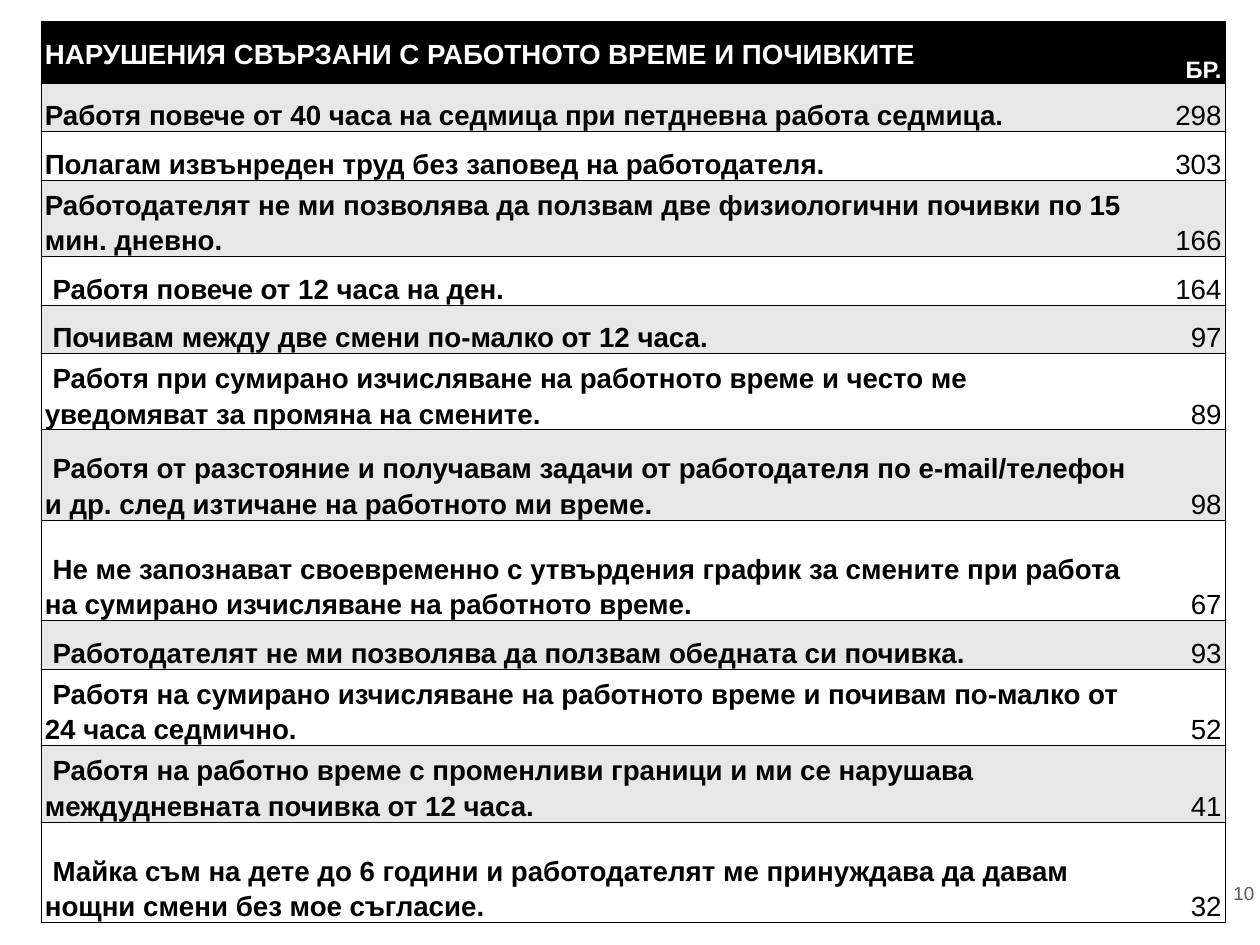
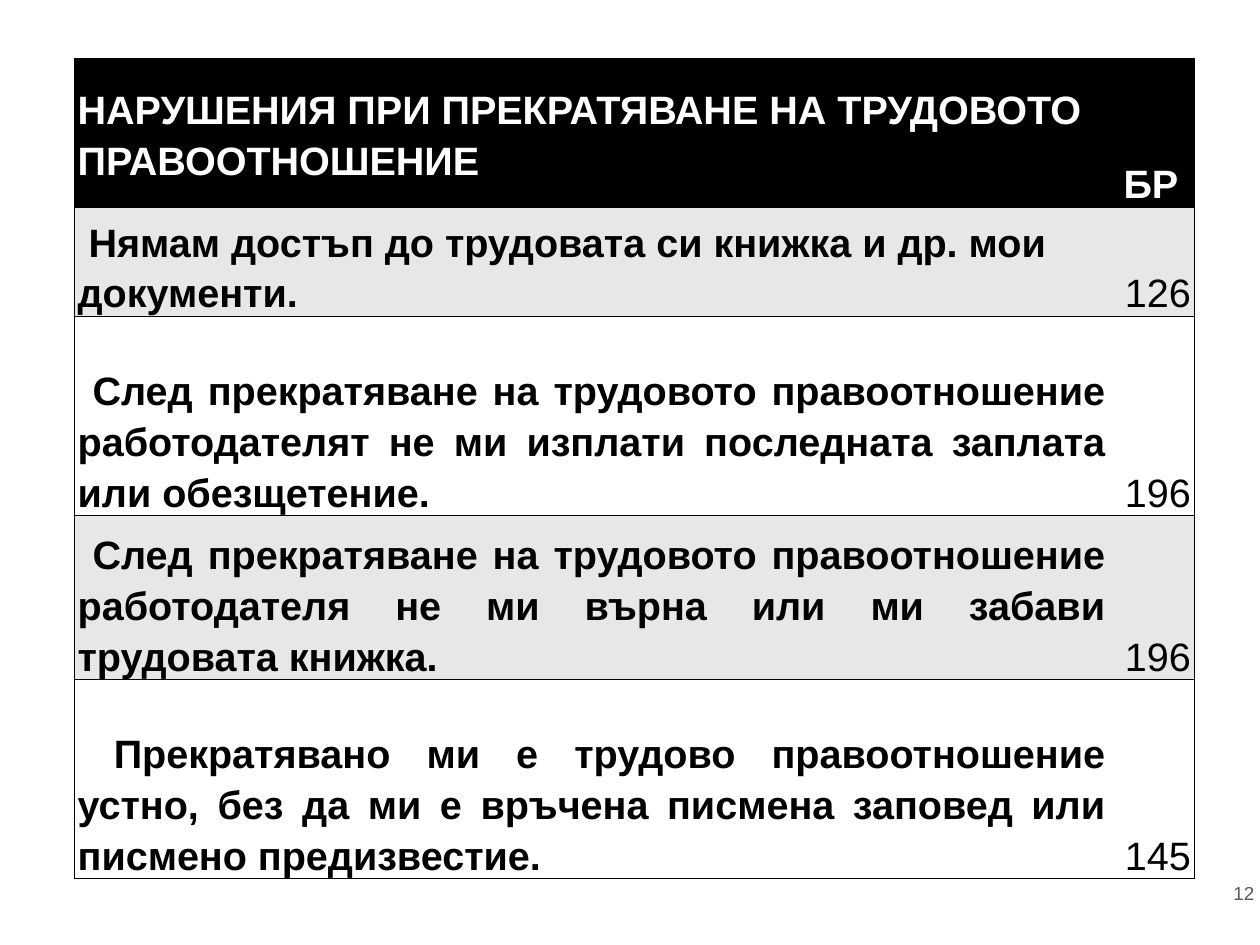
from dataclasses import dataclass

import lxml.etree
import pptx
import pptx.dml.color
import pptx.enum.text
import pptx.oxml.ns
import pptx.util

Inches = pptx.util.Inches
Align = pptx.enum.text.PP_ALIGN
Anchor = pptx.enum.text.MSO_ANCHOR

FONT = "Arial"
BLACK, WHITE, BAND, GREY = "000000", "FFFFFF", "E7E7E7", "595959"


@dataclass
class Row:
    height: float
    label: str
    count: str
    align: Align = Align.LEFT


@dataclass
class Page:
    number: str
    left: float
    top: float
    widths: tuple[float, float]
    size: int
    head_size: int
    head_align: Align
    rows: list[Row]  # the first row is the header


PAGES = [
    Page("10", 0.58, 0.3, (15.36, 1.26), 28, 24, Align.RIGHT, [
        Row(0.87, "НАРУШЕНИЯ СВЪРЗАНИ С РАБОТНОТО ВРЕМЕ И ПОЧИВКИТЕ", " БР."),
        Row(0.68, "Работя повече от 40 часа на седмица при петдневна работа седмица.", "298"),
        Row(0.68, "Полагам извънреден труд без заповед на работодателя.", "303"),
        Row(1.02, "Работодателят не ми позволява да ползвам две физиологични "
            "почивки по 15 мин. дневно.", "166"),
        Row(0.68, " Работя повече от 12 часа на ден.", "164"),
        Row(0.68, " Почивам между две смени по-малко от 12 часа.", "97"),
        Row(1.02, " Работя при сумирано изчисляване на работното време и често ме "
            "уведомяват за промяна на смените.", "89"),
        Row(1.27, " Работя от разстояние и получавам задачи от работодателя по "
            "e-mail/телефон и др. след изтичане на работното ми време.", "98"),
        Row(1.41, " Не ме запознават своевременно с утвърдения график за смените при "
            "работа на сумирано изчисляване на работното време.", "67"),
        Row(0.68, " Работодателят не ми позволява да ползвам обедната си почивка.", "93"),
        Row(1.02, " Работя на сумирано изчисляване на работното време и почивам "
            "по-малко от 24 часа седмично.", "52"),
        Row(1.02, " Работя на работно време с променливи граници и ми се нарушава "
            "междудневната почивка от 12 часа.", "41"),
        Row(1.41, " Майка съм на дете до 6 години и работодателят ме принуждава да "
            "давам нощни смени без мое съгласие.", "32"),
    ]),
    Page("12", 1.04, 0.82, (14.53, 1.2), 40, 40, Align.LEFT, [
        Row(2.09, "НАРУШЕНИЯ ПРИ ПРЕКРАТЯВАНЕ НА ТРУДОВОТО ПРАВООТНОШЕНИЕ", " БР"),
        Row(1.38, " Нямам достъп до трудовата си книжка и др. мои документи.", "126"),
        Row(2.8, " След прекратяване на трудовото правоотношение работодателят не ми "
            "изплати последната заплата или обезщетение.", "196", Align.JUSTIFY),
        Row(2.09, " След прекратяване на трудовото правоотношение работодателя не ми "
            "върна или ми забави трудовата книжка.", "196", Align.JUSTIFY),
        Row(2.8, " Прекратявано ми е трудово правоотношение устно, без да ми е "
            "връчена писмена заповед или писмено предизвестие.", "145", Align.JUSTIFY),
    ]),
]


def color(value: str) -> pptx.dml.color.RGBColor:
    return pptx.dml.color.RGBColor.from_string(value)


def write(frame, text: str, size: int, ink: str, align: Align, bold: bool = False) -> None:
    par = frame.paragraphs[0]
    par.text = text
    par.alignment = align
    par.font.name = FONT
    par.font.size = pptx.util.Pt(size)
    par.font.bold = bold
    par.font.color.rgb = color(ink)


def edge(cell, open_side: str) -> None:
    """Rule the cell in black on every side but the open one."""
    qn = pptx.oxml.ns.qn
    props = cell._tc.get_or_add_tcPr()
    for side in "LRTB":
        line = lxml.etree.SubElement(props, qn(f"a:ln{side}"), w="12700")
        if side == open_side:
            lxml.etree.SubElement(line, qn("a:noFill"))
        else:
            fill = lxml.etree.SubElement(line, qn("a:solidFill"))
            lxml.etree.SubElement(fill, qn("a:srgbClr"), val=BLACK)


def style(cell, fill: str, open_side: str, anchor: Anchor) -> None:
    edge(cell, open_side)
    cell.fill.solid()
    cell.fill.fore_color.rgb = color(fill)
    cell.margin_left = cell.margin_right = Inches(0.05)
    cell.margin_top = cell.margin_bottom = 0
    cell.vertical_anchor = anchor
    cell.text_frame.paragraphs[0].line_spacing = 1.15


def add_number(slide, number: str) -> None:
    """Set the page number in the right margin, clear of the widest table."""
    frame = slide.shapes.add_textbox(
        Inches(17.25), Inches(12.03), Inches(0.36), Inches(1.02)).text_frame
    frame.word_wrap = True
    frame.vertical_anchor = Anchor.MIDDLE
    frame.margin_left = frame.margin_right = 0
    frame.margin_top = frame.margin_bottom = 0
    write(frame, number, 19, GREY, Align.RIGHT)


def add_counts(slide, page: Page) -> None:
    table = slide.shapes.add_table(
        len(page.rows), 2, Inches(page.left), Inches(page.top),
        Inches(sum(page.widths)), Inches(sum(row.height for row in page.rows))).table
    table.horz_banding = table.first_row = False
    for column, width in zip(table.columns, page.widths):
        column.width = Inches(width)
    for i, row in enumerate(page.rows):
        head = i == 0
        table.rows[i].height = Inches(row.height)
        fill = BLACK if head else BAND if i % 2 else WHITE
        ink = WHITE if head else BLACK
        label, count = table.cell(i, 0), table.cell(i, 1)
        style(label, fill, "R", Anchor.MIDDLE if head else Anchor.BOTTOM)
        style(count, fill, "L", Anchor.BOTTOM)
        write(label.text_frame, row.label, page.size, ink, row.align, True)
        write(count.text_frame, row.count, page.head_size if head else page.size, ink,
              page.head_align if head else Align.RIGHT, head)


def main() -> None:
    deck = pptx.Presentation()
    deck.slide_width, deck.slide_height = Inches(17.69), Inches(13.27)
    blank = deck.slide_layouts[6]
    for page in PAGES:
        slide = deck.slides.add_slide(blank)
        add_number(slide, page.number)
        add_counts(slide, page)
    deck.save("out.pptx")


if __name__ == "__main__":
    main()
